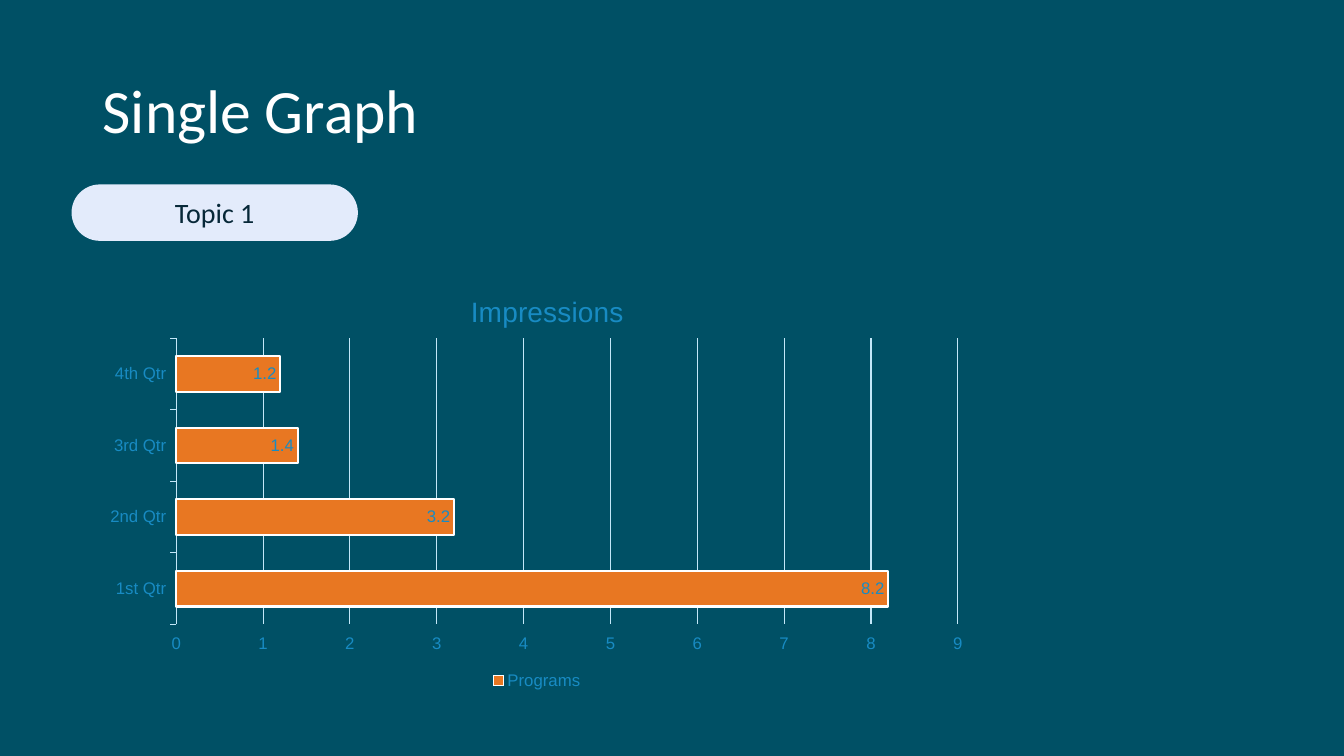
import pptx
import pptx.chart.data
import pptx.dml.color
import pptx.enum.chart
import pptx.enum.shapes
import pptx.enum.text
import pptx.oxml
import pptx.oxml.ns
import pptx.util

Inches = pptx.util.Inches
Pt = pptx.util.Pt
COLORS = {
    "background": "005065",
    "title": "FFFFFF",
    "topic_fill": "E3EBFB",
    "dark": "072838",
    "chart_text": "188BC3",
    "grid": "C3E7F8",
    "bar": "E87722",
    "bar_line": "FFFFFF",
}


def style_font(font, size, color, name="Arial"):
    font.size = Pt(size)
    font.bold = False
    font.name = name
    font.color.rgb = pptx.dml.color.RGBColor.from_string(COLORS[color])


def place(element, index, target, **fractions):
    for layout in element.findall(pptx.oxml.ns.qn("c:layout")):
        element.remove(layout)
    modes = "".join(f'<c:{axis}Mode val="edge"/>' for axis in "xy")
    values = "".join(f'<c:{key} val="{value}"/>' for key, value in fractions.items())
    element.insert(index, pptx.oxml.parse_xml(
        f'<c:layout {pptx.oxml.ns.nsdecls("c")}><c:manualLayout>'
        f"{target}{modes}{values}</c:manualLayout></c:layout>"))


presentation = pptx.Presentation()
presentation.slide_width = Inches(13.33)
presentation.slide_height = Inches(7.5)
slide = presentation.slides.add_slide(presentation.slide_layouts[6])
slide.background.fill.solid()
slide.background.fill.fore_color.rgb = pptx.dml.color.RGBColor.from_string(COLORS["background"])

title_box = slide.shapes.add_textbox(Inches(0.92), Inches(0.4), Inches(9.54), Inches(1.45))
title_frame = title_box.text_frame
title_frame.word_wrap = True
title_frame.vertical_anchor = pptx.enum.text.MSO_ANCHOR.MIDDLE
title_frame.text = "Single Graph"
title_frame.paragraphs[0].line_spacing = 0.9
style_font(title_frame.paragraphs[0].runs[0].font, 44, "title", "Calibri")

chart_data = pptx.chart.data.CategoryChartData()
chart_data.categories = ["1st Qtr", "2nd Qtr", "3rd Qtr", "4th Qtr"]
chart_data.add_series("Programs", [8.2, 3.2, 1.4, 1.2])
chart = slide.shapes.add_chart(
    pptx.enum.chart.XL_CHART_TYPE.BAR_CLUSTERED,
    Inches(0.92), Inches(2.66), Inches(8.81), Inches(4.22), chart_data).chart
style_font(chart.font, 10, "dark")

chart.has_title = True
chart_title = chart.chart_title
chart_title.text_frame.text = "Impressions"
style_font(chart_title.text_frame.paragraphs[0].runs[0].font, 20, "chart_text")
chart_title.include_in_layout = False
place(chart_title._element, 1, "", x=0.42, y=0.05)
place(chart.element.chart.plotArea, 0, '<c:layoutTarget val="inner"/>',
      x=0.094, y=0.165, w=0.88, h=0.673)

chart.has_legend = True
chart.legend.position = pptx.enum.chart.XL_LEGEND_POSITION.BOTTOM
chart.legend.include_in_layout = False
style_font(chart.legend.font, 12, "chart_text")

category_axis, value_axis = chart.category_axis, chart.value_axis
for axis in (category_axis, value_axis):
    axis.major_tick_mark = pptx.enum.chart.XL_TICK_MARK.OUTSIDE
    style_font(axis.tick_labels.font, 12, "chart_text")
value_axis.minimum_scale = 0
value_axis.maximum_scale = 9
value_axis.major_unit = 1
value_axis.has_major_gridlines = True
value_axis.format.line.fill.background()
for line in (category_axis.format.line, value_axis.major_gridlines.format.line):
    line.width = Pt(0.75)
    line.color.rgb = pptx.dml.color.RGBColor.from_string(COLORS["grid"])

plot = chart.plots[0]
plot.gap_width = 100
plot.vary_by_categories = False
series = plot.series[0]
series.format.fill.solid()
series.format.fill.fore_color.rgb = pptx.dml.color.RGBColor.from_string(COLORS["bar"])
series.format.line.width = Pt(1.5)
series.format.line.color.rgb = pptx.dml.color.RGBColor.from_string(COLORS["bar_line"])
labels = series.data_labels
labels.show_value = True
labels.position = pptx.enum.chart.XL_LABEL_POSITION.INSIDE_END
style_font(labels.font, 12, "chart_text")

topic = slide.shapes.add_shape(
    pptx.enum.shapes.MSO_SHAPE.ROUNDED_RECTANGLE,
    Inches(0.71), Inches(1.83), Inches(2.84), Inches(0.56))
topic.adjustments[0] = 0.5
topic.shadow.inherit = False
topic.fill.solid()
topic.fill.fore_color.rgb = pptx.dml.color.RGBColor.from_string(COLORS["topic_fill"])
topic.line.fill.background()
topic.text_frame.text = "Topic 1"
topic.text_frame.vertical_anchor = pptx.enum.text.MSO_ANCHOR.MIDDLE
topic_paragraph = topic.text_frame.paragraphs[0]
topic_paragraph.alignment = pptx.enum.text.PP_ALIGN.CENTER
style_font(topic_paragraph.runs[0].font, 20, "dark", "Calibri")

presentation.save("out.pptx")
